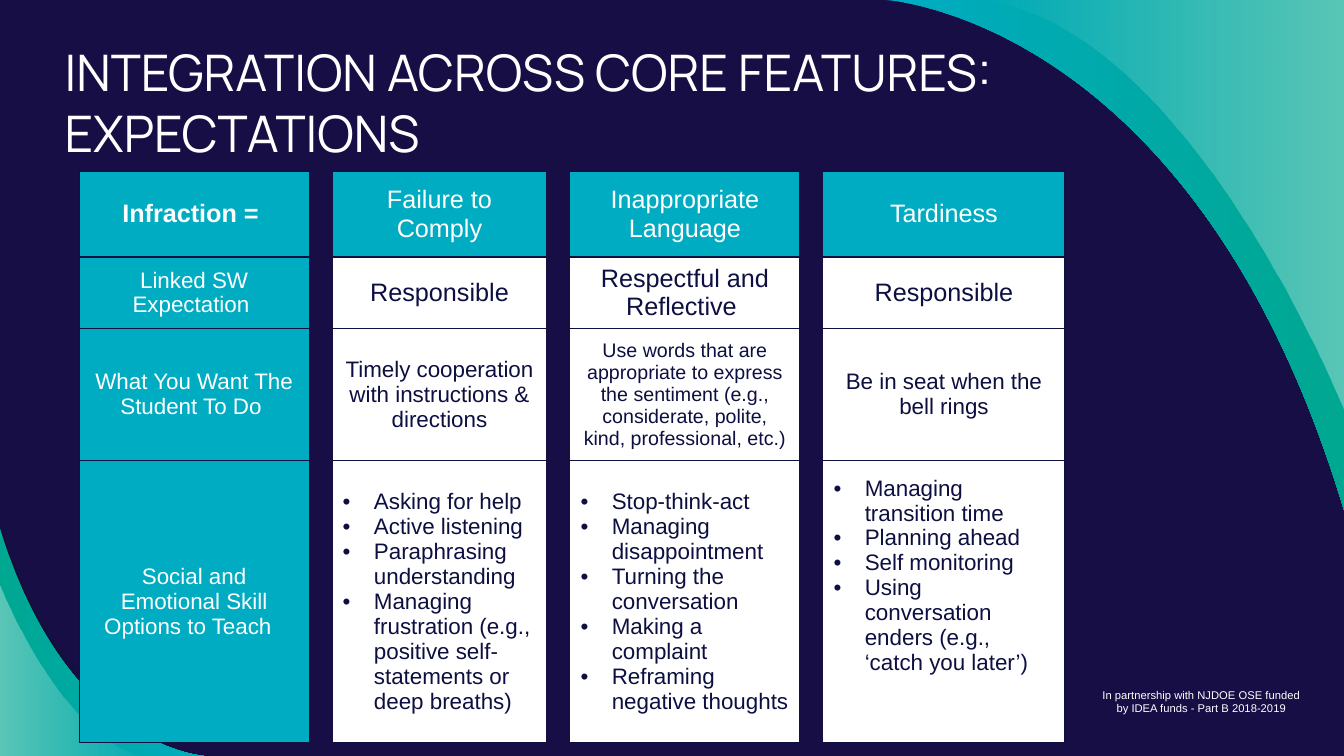
"""Build the slide on expectations across core features."""
import pptx
import pptx.dml.color
import pptx.enum.text
import pptx.oxml
import pptx.oxml.ns
import pptx.util
from pptx.util import Inches

NAVY, INK, CYAN, GREEN, WHITE = "160E44", "0D0F41", "00ACC2", "00A791", "FFFFFF"
TITLE = "INTEGRATION ACROSS CORE FEATURES: EXPECTATIONS"
CREDIT = "In partnership with NJDOE OSE funded by IDEA funds - Part B 2018-2019"

COLUMN_WIDTHS = [2.27, 0.23, 2.12, 0.23, 2.27, 0.23, 2.39]
ROW_HEIGHTS = [0.85, 0.71, 1.31, 2.8]
ROWS = [
    ["Infraction = ", "Failure to Comply", "Inappropriate Language", "Tardiness"],
    ["Linked SW Expectation ", "Responsible", "Respectful and Reflective ", "Responsible"],
    [
        "What You Want The Student To Do ",
        "Timely cooperation with instructions & directions",
        "Use words that are appropriate to express the sentiment "
        "(e.g., considerate, polite, kind, professional, etc.)",
        "Be in seat when the bell rings",
    ],
    [
        "Social and Emotional Skill Options to Teach  ",
        ["Asking for help", "Active listening", "Paraphrasing understanding",
         "Managing frustration (e.g., positive self-statements or deep breaths)"],
        ["Stop-think-act", "Managing disappointment", "Turning the conversation",
         "Making a complaint", "Reframing negative thoughts"],
        ["Managing transition time", "Planning ahead", "Self monitoring",
         "Using conversation enders (e.g., ‘catch you later’)"],
    ],
]
SIZES = [[18, 18, 18, 18], [16, 18, 18, 18], [16, 16, 14, 16], [16, 16, 16, 16]]

SWOOSHES = [
    ([(0, 5.18), (0.67, 7.42), (2.08, 7.5), (2.08, 7.5)], (0, 7.5), [("12102F", 54)]),
    ([(0, 5.24), (0.66, 7.43), (2.03, 7.5), (2.03, 7.5)], (0, 7.5), [(GREEN, 100), (CYAN, 100)]),
    ([(0, 5.82), (0, 5.82), (0.63, 7.4), (1.48, 7.5)], (0, 7.5), [(WHITE, 36), (WHITE, 0)]),
    ([(8.78, 0), (8.78, 0), (11.86, 0.16), (13.33, 5.06)], (13.33, 0), [(CYAN, 100), (GREEN, 100)]),
    ([(9.72, 0), (11.8, 0.25), (13.33, 4.08), (13.33, 4.08)], (13.33, 0), [(WHITE, 0), (WHITE, 36)]),
]


def color(value):
    return pptx.dml.color.RGBColor.from_string(value)


def add_xml(parent, tag, index=None, **attributes):
    element = pptx.oxml.parse_xml(f"<a:{tag} {pptx.oxml.ns.nsdecls('a')}/>")
    for name, value in attributes.items():
        element.set(name, str(value))
    parent.insert(len(parent) if index is None else index, element)
    return element


def format_runs(paragraph, size, value, font="Arial", bold=False):
    for run in paragraph.runs:
        run.font.size = pptx.util.Pt(size)
        run.font.name = font
        run.font.bold = bold
        run.font.color.rgb = color(value)


def bend_first_three_segments(shape):
    segments = shape._element.spPr.findall(".//" + pptx.oxml.ns.qn("a:lnTo"))[:3]
    outline = segments[0].getparent()
    curve = add_xml(outline, "cubicBezTo", outline.index(segments[0]))
    for segment in segments:
        curve.append(segment[0])
        outline.remove(segment)


def add_swoosh(slide, points, corner, stops):
    outline = [(Inches(x), Inches(y)) for x, y in points + [corner]]
    builder = slide.shapes.build_freeform(*outline[0])
    builder.add_line_segments(outline[1:], close=True)
    shape = builder.convert_to_shape()
    bend_first_three_segments(shape)
    shape.shadow.inherit = False
    shape.line.fill.background()
    if len(stops) == 1:
        shape.fill.solid()
        shape.fill.fore_color.rgb = color(stops[0][0])
    else:
        shape.fill.gradient()
        shape.fill.gradient_angle = 0
        for stop, (value, _) in zip(shape.fill.gradient_stops, stops):
            stop.color.rgb = color(value)
    fills = shape._element.spPr.findall(".//" + pptx.oxml.ns.qn("a:srgbClr"))
    for fill, (_, opacity) in zip(fills, stops):
        if opacity < 100:
            add_xml(fill, "alpha", val=opacity * 1000)


def add_borders(cell, sides):
    properties = cell._tc.get_or_add_tcPr()
    for index, side in enumerate(sides):
        line = add_xml(properties, "ln" + side, index, w=pptx.util.Pt(1))
        add_xml(add_xml(line, "solidFill"), "srgbClr", val=INK)


def fill_cell(cell, content, size, fill, ink, bold):
    cell.fill.solid()
    cell.fill.fore_color.rgb = color(fill)
    cell.vertical_anchor = pptx.enum.text.MSO_ANCHOR.MIDDLE
    bulleted = isinstance(content, list)
    cell.text = "\n".join(content) if bulleted else content
    for paragraph in cell.text_frame.paragraphs:
        if bulleted:
            properties = paragraph._p.get_or_add_pPr()
            properties.set("marL", str(Inches(0.31)))
            properties.set("indent", str(-Inches(0.31)))
            add_xml(properties, "buFont", typeface="Arial")
            add_xml(properties, "buChar", char="•")
        else:
            paragraph.alignment = pptx.enum.text.PP_ALIGN.CENTER
        format_runs(paragraph, size, ink, bold=bold)


def add_expectations_table(slide):
    table = slide.shapes.add_table(
        len(ROW_HEIGHTS), len(COLUMN_WIDTHS), Inches(0.79), Inches(1.7),
        Inches(sum(COLUMN_WIDTHS)), Inches(sum(ROW_HEIGHTS))).table
    table.first_row = table.horz_banding = False
    style = table._tbl.tblPr.find(pptx.oxml.ns.qn("a:tableStyleId"))
    style.text = "{2D5ABB26-0587-4C30-8999-92F81FD0307C}"
    for column, width in zip(table.columns, COLUMN_WIDTHS):
        column.width = Inches(width)
    for row, height in zip(table.rows, ROW_HEIGHTS):
        row.height = Inches(height)
    table.cell(0, 1).merge(table.cell(len(ROWS) - 1, 1))
    for row, contents in enumerate(ROWS):
        for column, content in enumerate(contents):
            cell = table.cell(row, column * 2)
            heading = row == 0 or column == 0
            fill_cell(cell, content, SIZES[row][column], CYAN if heading else WHITE,
                      WHITE if heading else INK, row == column == 0)
            add_borders(cell, {0: "LTB", 3: "RTB"}.get(column, "TB"))
    table.cell(3, 6).margin_bottom = Inches(0.57)


def add_title(slide):
    title = slide.shapes.title
    title.left, title.top, title.width, title.height = map(Inches, (0.54, 0.31, 10.26, 0.92))
    frame = title.text_frame
    frame.text = TITLE
    frame.auto_size = pptx.enum.text.MSO_AUTO_SIZE.NONE
    frame.vertical_anchor = pptx.enum.text.MSO_ANCHOR.TOP
    frame.margin_left = frame.margin_right = frame.margin_top = frame.margin_bottom = Inches(0.1)
    paragraph = frame.paragraphs[0]
    paragraph.alignment = pptx.enum.text.PP_ALIGN.LEFT
    paragraph.line_spacing = 1.0
    format_runs(paragraph, 36, WHITE, font="Manrope")
    slide.shapes._spTree.append(title._element)


def add_credit(slide):
    box = slide.shapes.add_textbox(Inches(10.79), Inches(6.73), Inches(2.25), Inches(0.46))
    frame = box.text_frame
    frame.word_wrap = True
    frame.vertical_anchor = pptx.enum.text.MSO_ANCHOR.MIDDLE
    frame.text = CREDIT
    frame.paragraphs[0].alignment = pptx.enum.text.PP_ALIGN.CENTER
    format_runs(frame.paragraphs[0], 8, WHITE)


def main():
    presentation = pptx.Presentation()
    presentation.slide_width, presentation.slide_height = Inches(13.33), Inches(7.5)
    slide = presentation.slides.add_slide(presentation.slide_layouts[5])
    slide.background.fill.solid()
    slide.background.fill.fore_color.rgb = color(NAVY)
    for points, corner, stops in SWOOSHES:
        add_swoosh(slide, points, corner, stops)
    add_expectations_table(slide)
    add_credit(slide)
    add_title(slide)
    presentation.save("out.pptx")


if __name__ == "__main__":
    main()
